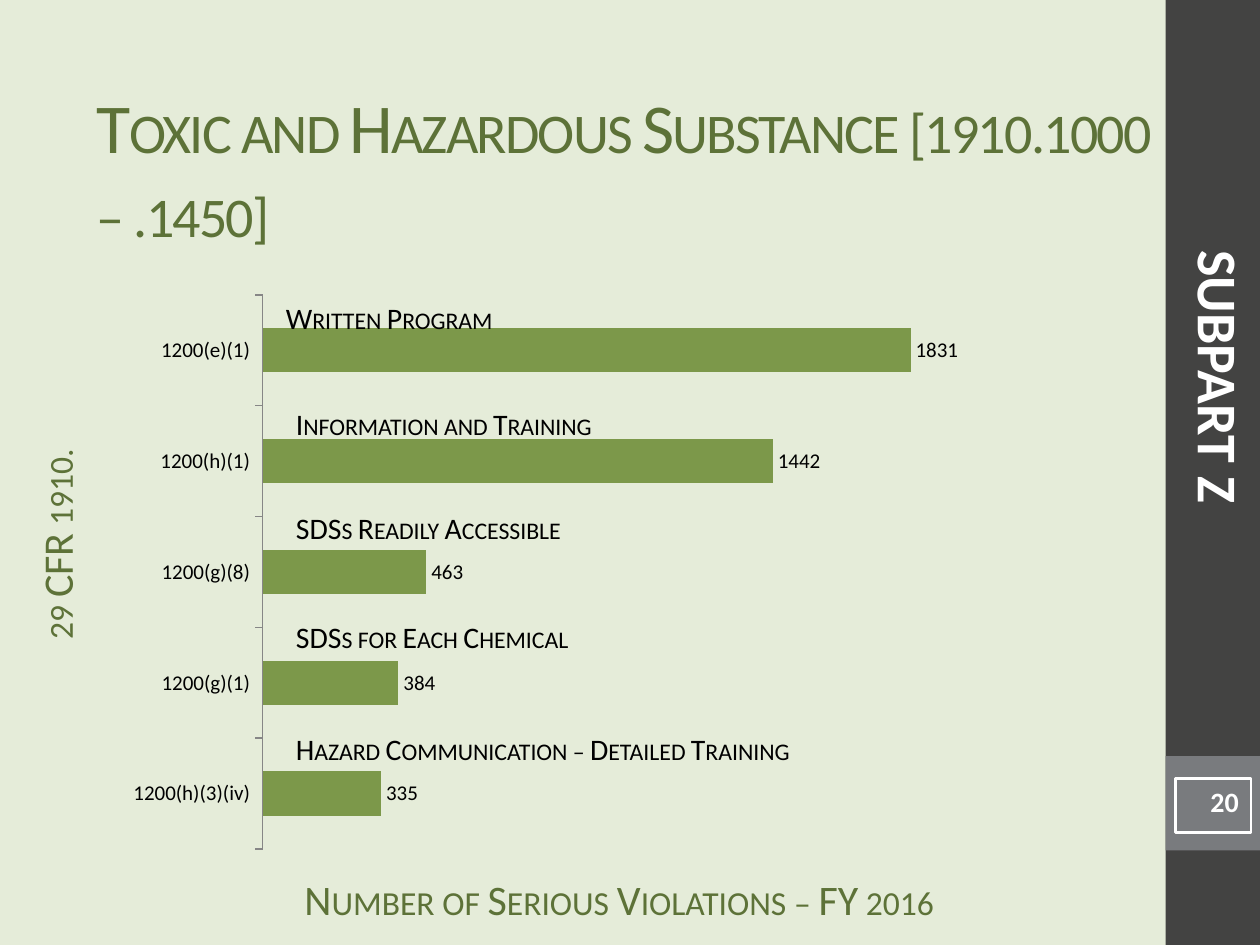
from pptx import Presentation
from pptx.chart.data import CategoryChartData
from pptx.dml.color import RGBColor
from pptx.enum.chart import XL_CHART_TYPE, XL_LABEL_POSITION, XL_TICK_MARK
from pptx.enum.shapes import MSO_SHAPE
from pptx.enum.text import MSO_ANCHOR, PP_ALIGN
from pptx.util import Inches, Pt

BAR_CLUSTERED = XL_CHART_TYPE.BAR_CLUSTERED
OUTSIDE_END = XL_LABEL_POSITION.OUTSIDE_END
TICK_OUT, TICK_NONE = XL_TICK_MARK.OUTSIDE, XL_TICK_MARK.NONE
RECTANGLE = MSO_SHAPE.RECTANGLE
TOP, MIDDLE = MSO_ANCHOR.TOP, MSO_ANCHOR.MIDDLE
LEFT, CENTER, RIGHT = PP_ALIGN.LEFT, PP_ALIGN.CENTER, PP_ALIGN.RIGHT

WIDTH, HEIGHT = 10, 7.5
SIDEBAR_LEFT = 0.925 * WIDTH
SIDEBAR_WIDTH = WIDTH - SIDEBAR_LEFT
FONT = "Calibri"
COLORS = {
    "background": "E5ECD9",
    "sidebar": "434342",
    "number_band": "797B7E",
    "heading": "5D7238",
    "bar": "7C984A",
    "axis": "868686",
    "text": "000000",
    "white": "FFFFFF",
}

# citation, violations, description, left and top of the description
VIOLATIONS = [
    ("1200(e)(1)", 1831, "Written Program", 2.17, 2.33),
    ("1200(h)(1)", 1442, "Information and Training", 2.25, 3.17),
    ("1200(g)(8)", 463, "SDSs Readily Accessible", 2.25, 4),
    ("1200(g)(1)", 384, "SDSs for Each Chemical", 2.25, 4.86),
    ("1200(h)(3)(iv)", 335, "Hazard Communication – Detailed Training", 2.25, 5.75),
]


def rgb(name):
    return RGBColor.from_string(COLORS[name])


def style_font(font, size, color="text", bold=False):
    font.name = FONT
    font.size = Pt(size)
    font.bold = bold
    font.color.rgb = rgb(color)


def write(shape, text, size, color="text", bold=False, small_caps=False,
          spacing=None, align=LEFT, anchor=TOP, wrap=True, margins=None):
    """Fill a shape with one formatted run; spacing is in points, margins are (top, bottom)."""
    frame = shape.text_frame
    frame.word_wrap = wrap
    frame.vertical_anchor = anchor
    if margins:
        frame.margin_top, frame.margin_bottom = map(Inches, margins)
    paragraph = frame.paragraphs[0]
    paragraph.alignment = align
    run = paragraph.add_run()
    run.text = text
    style_font(run.font, size, color, bold)
    properties = run.font._element
    if small_caps:
        properties.set("cap", "small")
    if spacing is not None:
        properties.set("spc", str(spacing * 100))


def add_text(slide, box, text, size, rotation=0, **text_format):
    label = slide.shapes.add_textbox(*map(Inches, box))
    label.rotation = rotation
    write(label, text, size, **text_format)


def add_rectangle(slide, box, fill=None, line=None):
    rectangle = slide.shapes.add_shape(RECTANGLE, *map(Inches, box))
    rectangle.shadow.inherit = False
    if fill:
        rectangle.fill.solid()
        rectangle.fill.fore_color.rgb = rgb(fill)
    else:
        rectangle.fill.background()
    if line:
        rectangle.line.color.rgb = rgb(line)
        rectangle.line.width = Pt(1.5)
    else:
        rectangle.line.fill.background()
    return rectangle


def add_violations_chart(slide, box):
    data = CategoryChartData()
    bottom_up = VIOLATIONS[::-1]
    data.categories = [row[0] for row in bottom_up]
    data.add_series("Series 1", [row[1] for row in bottom_up])
    chart = slide.shapes.add_chart(BAR_CLUSTERED, *map(Inches, box), data).chart
    style_font(chart.font, 10)
    chart.has_legend = False
    chart.has_title = False

    citations = chart.category_axis
    citations.major_tick_mark = TICK_OUT
    citations.minor_tick_mark = TICK_NONE
    citations.has_major_gridlines = False
    citations.format.line.color.rgb = rgb("axis")
    style_font(citations.tick_labels.font, 12)
    counts = chart.value_axis
    counts.visible = False
    counts.has_major_gridlines = False
    counts.minimum_scale = 0

    plot = chart.plots[0]
    plot.gap_width = 150
    plot.vary_by_categories = False
    bars = plot.series[0].format.fill
    bars.solid()
    bars.fore_color.rgb = rgb("bar")
    plot.has_data_labels = True
    labels = plot.data_labels
    labels.show_value = True
    labels.position = OUTSIDE_END
    style_font(labels.font, 12)


def add_sidebar(slide):
    add_rectangle(slide, (SIDEBAR_LEFT, 0, SIDEBAR_WIDTH, HEIGHT), fill="sidebar")
    add_rectangle(slide, (SIDEBAR_LEFT, 0.8 * HEIGHT, SIDEBAR_WIDTH, 0.1 * HEIGHT),
                  fill="number_band")
    page_number = add_rectangle(slide, (9.33, 6.18, 0.6, 0.43), line="white")
    write(page_number, "20", 16, color="white", bold=True, align=RIGHT, anchor=TOP)
    add_text(slide, (6.69, 2.67, 5.98, 0.64), "SUBPART Z", 32, rotation=90,
             color="white", bold=True, align=CENTER)


def main():
    deck = Presentation()
    deck.slide_width, deck.slide_height = Inches(WIDTH), Inches(HEIGHT)
    slide = deck.slides.add_slide(deck.slide_layouts[6])
    slide.background.fill.solid()
    slide.background.fill.fore_color.rgb = rgb("background")

    add_sidebar(slide)
    add_text(slide, (0.67, 0.58, 8.56, 1.5),
             "Toxic and Hazardous Substance [1910.1000 – .1450]", 40,
             color="heading", small_caps=True, spacing=-1, anchor=MIDDLE)
    axis_title = dict(color="heading", small_caps=True, align=CENTER, margins=(0, 0.05))
    add_text(slide, (2.08, 6.93, 5.67, 0.33),
             "Number of Serious Violations – FY 2016", 24, **axis_title)
    add_text(slide, (-1.56, 4.03, 4.19, 0.58), "29 CFR 1910.", 24,
             rotation=270, **axis_title)

    add_violations_chart(slide, (0.92, 2.25, 6.92, 4.58))
    for _, _, description, left, top in VIOLATIONS:
        add_text(slide, (left, top, 4.23, 0.39), description, 17,
                 small_caps=True, wrap=False)
    deck.save("out.pptx")


if __name__ == "__main__":
    main()
